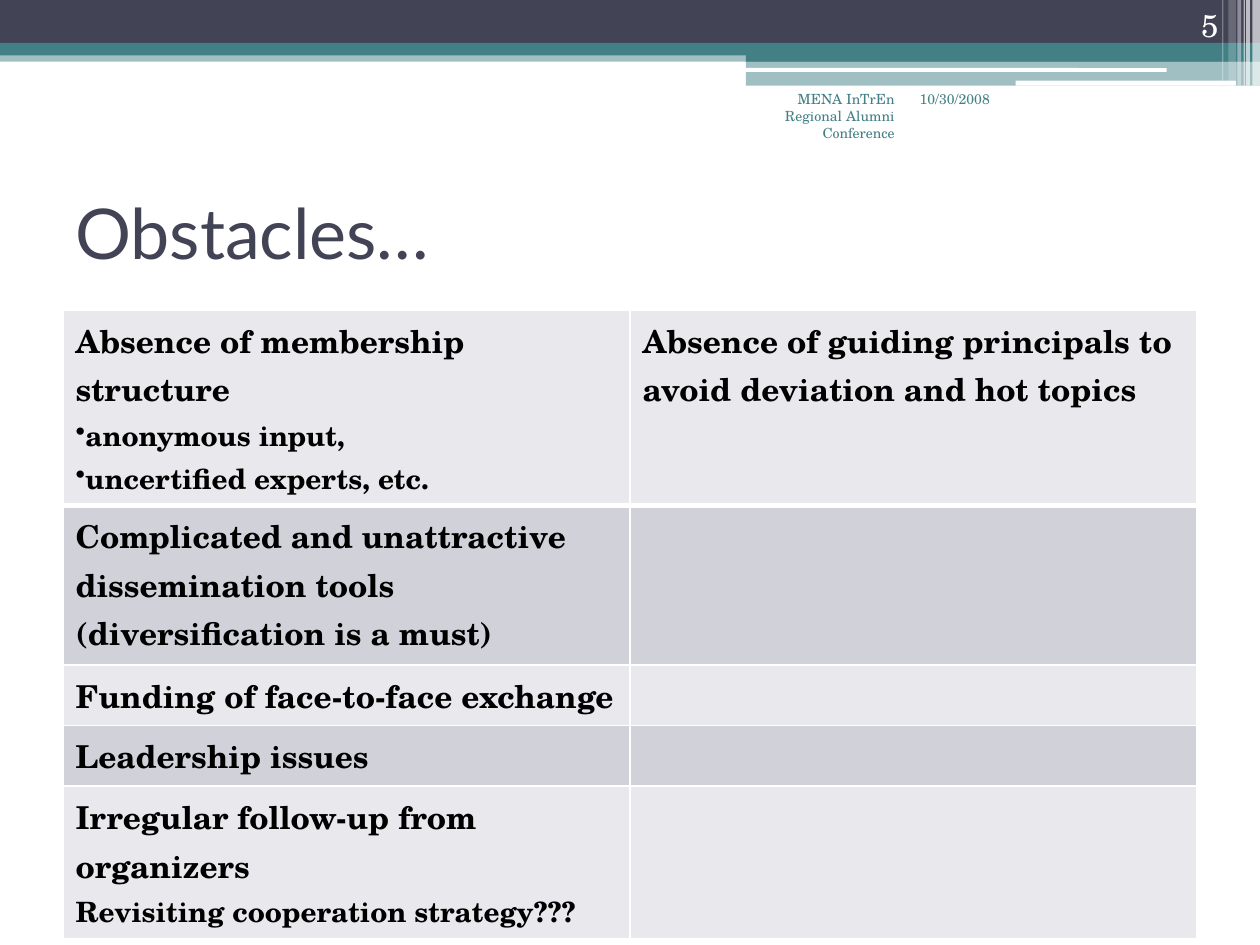
from lxml import etree
from pptx import Presentation
from pptx.dml.color import RGBColor
from pptx.enum.shapes import MSO_SHAPE
from pptx.enum.text import MSO_ANCHOR, PP_ALIGN
from pptx.oxml.ns import qn
from pptx.util import Inches, Pt

RECT, ROUND = MSO_SHAPE.RECTANGLE, MSO_SHAPE.ROUNDED_RECTANGLE
TOP, MIDDLE, BOTTOM = MSO_ANCHOR.TOP, MSO_ANCHOR.MIDDLE, MSO_ANCHOR.BOTTOM
LEFT, RIGHT = PP_ALIGN.LEFT, PP_ALIGN.RIGHT

SERIF, SANS = "TeX Gyre Schola", "Lato"
NAVY, TEAL, WHITE, BLACK = "424456", "438086", "FFFFFF", "000000"
BANDS = ("E9E9ED", "D1D1DA")

# Header decoration: shape, left, top, width, height, colour, opacity in percent
HEADER = [
    (RECT, 0, 0.4, 10, 0.09, TEAL, 50),
    (RECT, 0, 0, 10, 0.34, NAVY, 100),
    (RECT, 0, 0.34, 10, 0.1, TEAL, 100),
    (RECT, 5.92, 0.39, 4.08, 0.1, TEAL, 100),
    (RECT, 5.92, 0.48, 4.08, 0.2, TEAL, 50),
    (ROUND, 5.91, 0.54, 3.35, 0.03, WHITE, 100),
    (ROUND, 8.06, 0.64, 1.75, 0.04, WHITE, 100),
]
# Light stripes at the right edge: left, width, height, opacity
STRIPES = [
    (9.94, 0.06, 0.68, 65), (9.89, 0.03, 0.68, 65), (9.87, 0.01, 0.68, 60),
    (9.82, 0.03, 0.68, 40), (9.75, 0.06, 0.64, 20), (9.7, 0.01, 0.64, 30),
]
# Texts: wording, left, top, width, height, font, size, colour, alignment, anchor
TEXTS = [
    ("Obstacles…", 0.5, 1.25, 9, 1.17, SANS, 40, NAVY, LEFT, MIDDLE),
    ("MENA InTrEn Regional Alumni Conference",
     5.75, 0.67, 1.45, 0.5, SERIF, 8, TEAL, RIGHT, TOP),
    ("10/30/2008", 7.2, 0.67, 1.05, 0.5, SERIF, 8, TEAL, LEFT, TOP),
    ("5", 8.94, 0, 0.83, 0.4, SERIF, 18, WHITE, RIGHT, BOTTOM),
]
# Table rows: height, then per cell a list of (wording, size, bulleted)
ROWS = [
    (1.55, [
        [("Absence of membership structure", 18, False),
         ("anonymous input,", 16, True),
         ("uncertified experts, etc.", 16, True)],
        [("Absence of guiding principals to avoid deviation and hot topics", 18, False)],
    ]),
    (1.27, [[("Complicated and unattractive dissemination tools "
              "(diversification is a must)", 18, False)], []]),
    (0.48, [[("Funding of face-to-face exchange", 18, False)], []]),
    (0.48, [[("Leadership issues", 18, False)], []]),
    (1.21, [[("Irregular follow-up from organizers", 18, False),
             ("Revisiting cooperation strategy???", 16, False)], []]),
]
TABLE_LEFT, TABLE_TOP, TABLE_WIDTH = 0.5, 2.46, 9


def paint(fill, colour, opacity=100):
    fill.solid()
    fill.fore_color.rgb = RGBColor.from_string(colour)
    if opacity < 100:
        tint = fill._xPr.find(".//" + qn("a:srgbClr"))
        etree.SubElement(tint, qn("a:alpha"), val=str(opacity * 1000))


def style(para, font, size, colour, bold=False):
    para.font.name = font
    para.font.size = Pt(size)
    para.font.bold = bold
    para.font.color.rgb = RGBColor.from_string(colour)


def add_bar(slide, kind, left, top, width, height, colour, opacity):
    bar = slide.shapes.add_shape(kind, *map(Inches, (left, top, width, height)))
    bar.shadow.inherit = False
    bar.line.fill.background()
    paint(bar.fill, colour, opacity)


def add_text(slide, wording, left, top, width, height, font, size, colour, align, anchor):
    box = slide.shapes.add_textbox(*map(Inches, (left, top, width, height)))
    frame = box.text_frame
    frame.word_wrap = True
    frame.vertical_anchor = anchor
    para = frame.paragraphs[0]
    para.text = wording
    para.alignment = align
    style(para, font, size, colour)


def add_borders(cell, bottom_width):
    properties = cell._tc.get_or_add_tcPr()
    for side, width in (("L", 1), ("R", 1), ("T", 1), ("B", bottom_width)):
        line = etree.SubElement(properties, qn("a:ln" + side), w=str(Pt(width)))
        solid = etree.SubElement(line, qn("a:solidFill"))
        etree.SubElement(solid, qn("a:srgbClr"), val=WHITE)


def fill_cell(cell, paragraphs):
    frame = cell.text_frame
    for index, (wording, size, bulleted) in enumerate(paragraphs):
        para = frame.add_paragraph() if index else frame.paragraphs[0]
        para.text = wording
        if bulleted:
            etree.SubElement(para._p.get_or_add_pPr(), qn("a:buChar"), char="•")
        style(para, SERIF, size, BLACK, bold=True)


def add_obstacles(slide):
    columns = len(ROWS[0][1])
    height = sum(row_height for row_height, _ in ROWS)
    table = slide.shapes.add_table(
        len(ROWS), columns,
        *map(Inches, (TABLE_LEFT, TABLE_TOP, TABLE_WIDTH, height))).table
    table.first_row = table.horz_banding = False
    for column in table.columns:
        column.width = Inches(TABLE_WIDTH / columns)
    for row, (row_height, cells) in enumerate(ROWS):
        table.rows[row].height = Inches(row_height)
        for column, paragraphs in enumerate(cells):
            cell = table.cell(row, column)
            add_borders(cell, 1 if row else 3)
            paint(cell.fill, BANDS[row % 2])
            fill_cell(cell, paragraphs)


def main():
    deck = Presentation()
    deck.slide_width, deck.slide_height = Inches(10), Inches(7.5)
    slide = deck.slides.add_slide(deck.slide_layouts[6])
    # Header
    for bar in HEADER:
        add_bar(slide, *bar)
    for left, width, height, opacity in STRIPES:
        add_bar(slide, RECT, left, 0, width, height, WHITE, opacity)
    # Title, footer, date and page number
    for text in TEXTS:
        add_text(slide, *text)
    # Table of obstacles
    add_obstacles(slide)
    deck.save("out.pptx")


if __name__ == "__main__":
    main()
